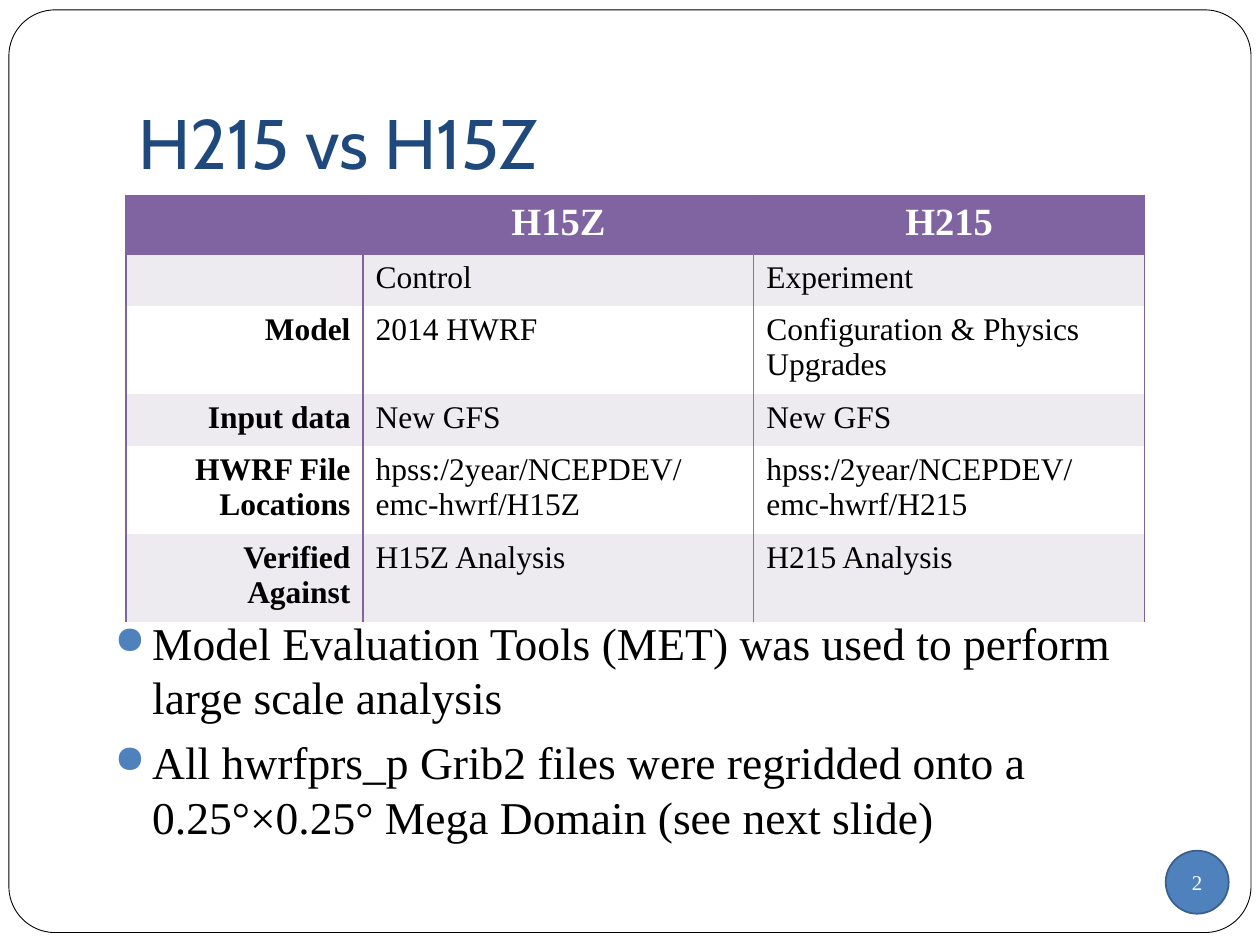
from dataclasses import dataclass

from lxml.etree import SubElement
from pptx import Presentation
from pptx.dml.color import RGBColor
from pptx.enum.shapes import MSO_SHAPE
from pptx.enum.text import MSO_ANCHOR, PP_ALIGN
from pptx.oxml import parse_xml
from pptx.oxml.ns import nsdecls, qn
from pptx.util import Cm, Pt


@dataclass(frozen=True)
class Theme:
    """Colours, fonts and type sizes of the deck."""
    white: str = "FFFFFF"
    black: str = "000000"
    navy: str = "1F497D"
    blue: str = "4F81BD"
    blue_edge: str = "3A5F8C"
    purple: str = "8064A2"
    band: str = "EDEAF0"
    divider: str = "808080"
    heading_font: str = "Cabin"
    body_font: str = "Times New Roman"
    title_size: int = 40
    bullet_size: int = 26
    header_size: int = 22
    cell_size: int = 18
    number_size: int = 12


THEME = Theme()

ROWS = [
    ("", "H15Z", "H215"),
    ("", "Control", "Experiment"),
    ("Model", "2014 HWRF", "Configuration & Physics Upgrades"),
    ("Input data", "New GFS", "New GFS"),
    ("HWRF File Locations", "hpss:/2year/NCEPDEV/emc-hwrf/H15Z", "hpss:/2year/NCEPDEV/emc-hwrf/H215"),
    ("Verified Against", "H15Z Analysis", "H215 Analysis"),
]

BULLETS = [
    "Model Evaluation Tools (MET) was used to perform large scale analysis",
    "All hwrfprs_p Grib2 files were regridded onto a 0.25°×0.25° Mega Domain (see next slide)",
]


def style_paragraph(paragraph, size, color, font=THEME.body_font, bold=False, align=PP_ALIGN.LEFT):
    """Align a paragraph and format its runs."""
    paragraph.alignment = align
    for target in (paragraph, *paragraph.runs):
        target.font.size = Pt(size)
        target.font.name = font
        target.font.bold = bold
        target.font.color.rgb = RGBColor.from_string(color)


def add_outlined_shape(slide, kind, box, fill, line, width):
    """Add a flat preset shape with a solid fill and outline."""
    shape = slide.shapes.add_shape(kind, *map(Cm, box))
    shape.shadow.inherit = False
    shape.fill.solid()
    shape.fill.fore_color.rgb = RGBColor.from_string(fill)
    shape.line.color.rgb = RGBColor.from_string(line)
    shape.line.width = Pt(width)
    return shape


def add_frame(slide, box):
    """Draw the rounded frame around the slide."""
    frame = add_outlined_shape(slide, MSO_SHAPE.ROUNDED_RECTANGLE, box, THEME.white, THEME.black, 0.5)
    frame.adjustments[0] = 0.05


def add_page_number(slide, box, number):
    """Draw the page number in its circle."""
    badge = add_outlined_shape(slide, MSO_SHAPE.OVAL, box, THEME.blue, THEME.blue_edge, 1)
    text_frame = badge.text_frame
    text_frame.margin_left = text_frame.margin_right = 0
    text_frame.vertical_anchor = MSO_ANCHOR.MIDDLE
    text_frame.text = str(number)
    style_paragraph(text_frame.paragraphs[0], THEME.number_size, THEME.white, align=PP_ALIGN.CENTER)


def add_title(slide, box, text):
    """Place the title at the bottom of its box."""
    text_frame = slide.shapes.add_textbox(*map(Cm, box)).text_frame
    text_frame.word_wrap = True
    text_frame.vertical_anchor = MSO_ANCHOR.BOTTOM
    text_frame.margin_bottom = Cm(0.25)
    text_frame.text = text
    style_paragraph(text_frame.paragraphs[0], THEME.title_size, THEME.navy, THEME.heading_font)


def add_bullets(slide, box, lines):
    """Place a bulleted list with hanging indents."""
    text_frame = slide.shapes.add_textbox(*map(Cm, box)).text_frame
    text_frame.word_wrap = True
    text_frame.text = "\n".join(lines)
    for paragraph in text_frame.paragraphs:
        style_paragraph(paragraph, THEME.bullet_size, THEME.black)
        paragraph.space_before = Pt(5.8)
        properties = paragraph._p.get_or_add_pPr()
        properties.set("marL", str(Cm(0.76)))
        properties.set("indent", str(-Cm(0.76)))
        color = SubElement(properties, qn("a:buClr"))
        SubElement(color, qn("a:srgbClr"), val=THEME.blue)
        SubElement(properties, qn("a:buSzPct"), val="85000")
        SubElement(properties, qn("a:buChar"), char="●")


def set_borders(cell, left, right, horizontal):
    """Set cell borders, each a (colour, points) pair or None."""
    properties = cell._tc.get_or_add_tcPr()
    borders = {"lnL": left, "lnR": right, "lnT": horizontal, "lnB": horizontal}
    for index, (tag, border) in enumerate(borders.items()):
        color, width = border or (None, 0)
        paint = f'<a:solidFill><a:srgbClr val="{color}"/></a:solidFill>' if color else "<a:noFill/>"
        line = parse_xml(f'<a:{tag} {nsdecls("a")} w="{Pt(width)}">{paint}</a:{tag}>')
        properties.insert(index, line)


def add_comparison_table(slide, box, rows):
    """Place the table with a header row and banded rows."""
    left, top, width, height = box
    shape = slide.shapes.add_table(len(rows), len(rows[0]), *map(Cm, box))
    table = shape.table
    label_width = 4.78
    widths = [label_width] + [(width - label_width) / 2] * 2
    for column, column_width in zip(table.columns, widths):
        column.width = Cm(column_width)
    edge, divider = (THEME.purple, 1), (THEME.divider, 0.5)
    verticals = [edge, edge, divider, edge]
    for row_index, values in enumerate(rows):
        header = row_index == 0
        fill = THEME.purple if header else (THEME.white, THEME.band)[row_index % 2]
        for column_index, value in enumerate(values):
            label = column_index == 0
            cell = table.cell(row_index, column_index)
            cell.text = value
            cell.fill.solid()
            cell.fill.fore_color.rgb = RGBColor.from_string(fill)
            align = PP_ALIGN.CENTER if header else PP_ALIGN.RIGHT if label else PP_ALIGN.LEFT
            style_paragraph(
                cell.text_frame.paragraphs[0],
                THEME.header_size if header else THEME.cell_size,
                THEME.white if header else THEME.black,
                bold=header or label,
                align=align,
            )
            sides = (edge, edge) if header else verticals[column_index:column_index + 2]
            set_borders(cell, *sides, edge if header else None)


def build_comparison_slide(presentation):
    """Build the slide that compares the two model runs."""
    slide = presentation.slides.add_slide(presentation.slide_layouts[6])
    add_frame(slide, (0.18, 0.2, 25.04, 18.6))
    add_page_number(slide, (23.5, 17.15, 1.27, 1.27), 2)
    add_title(slide, (2.54, 0.76, 21.59, 3.18), "H215 vs H15Z")
    add_bullets(slide, (2.06, 12.27, 21.59, 6.1), BULLETS)
    add_comparison_table(slide, (2.54, 3.94, 20.53, 6.24), ROWS)


def main():
    """Create and save the presentation."""
    presentation = Presentation()
    presentation.slide_width, presentation.slide_height = Cm(25.4), Cm(19.05)
    build_comparison_slide(presentation)
    presentation.save("out.pptx")


if __name__ == "__main__":
    main()
